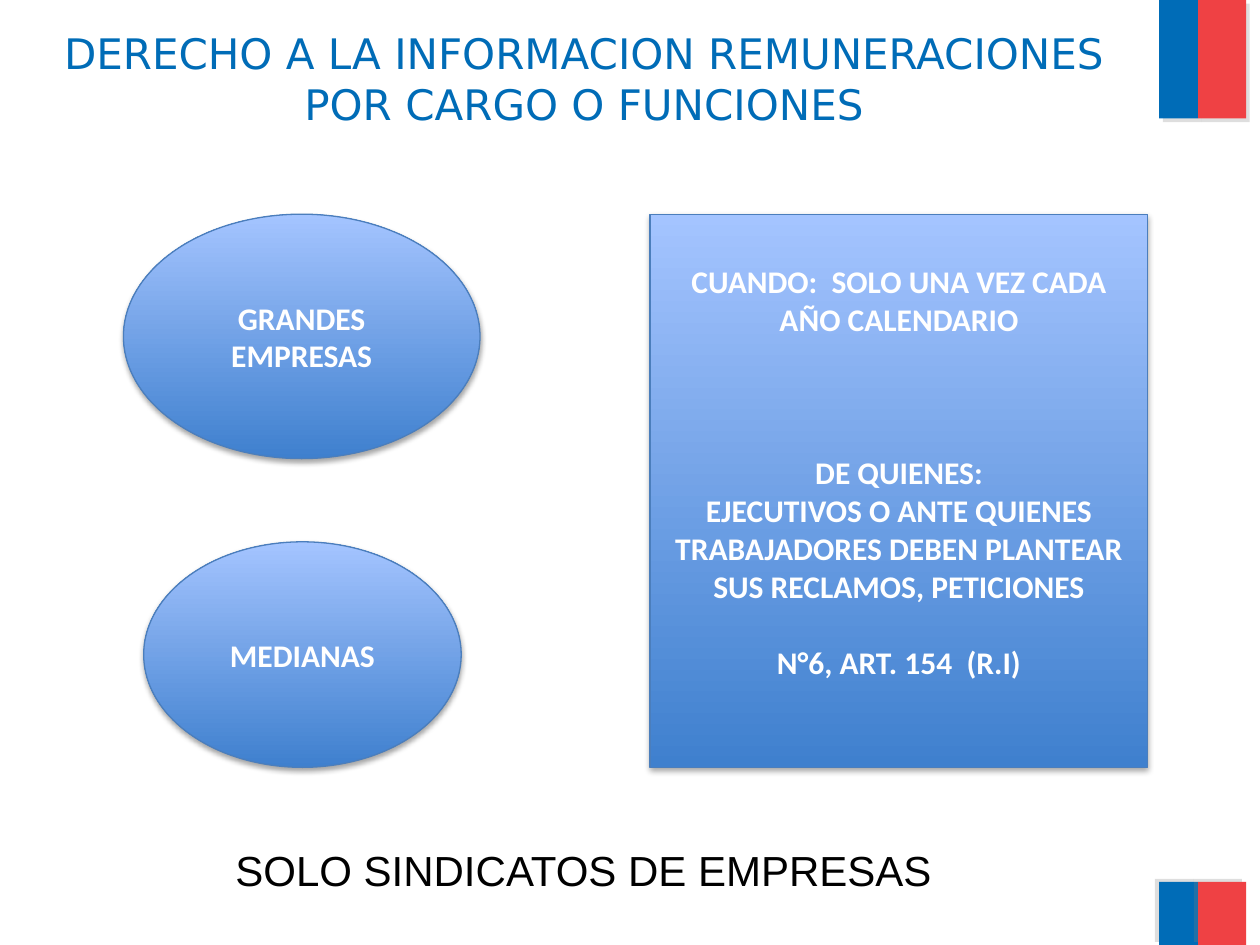
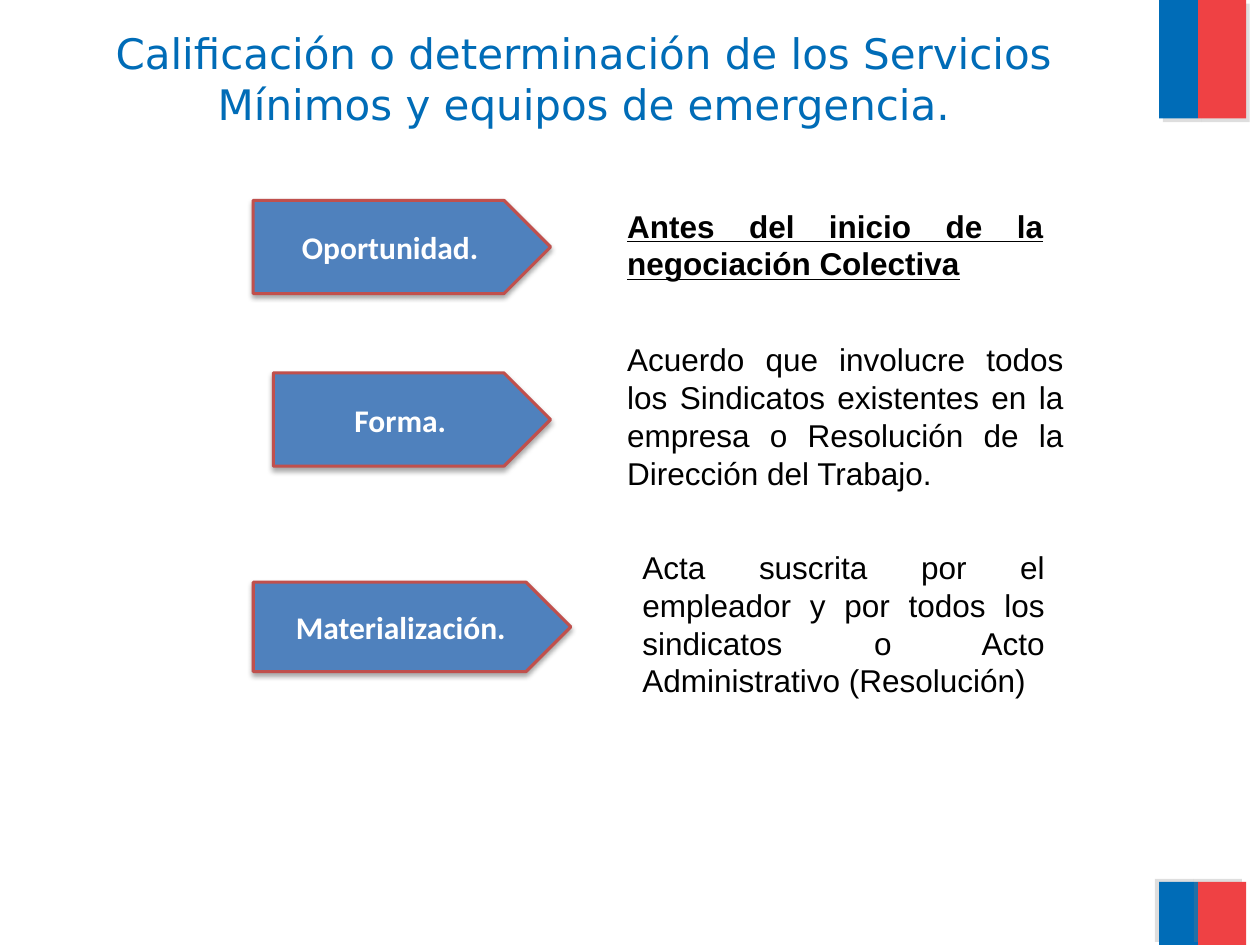
from lxml import etree
from pptx import Presentation
from pptx.dml.color import RGBColor
from pptx.enum.shapes import MSO_SHAPE as Shape
from pptx.enum.text import MSO_ANCHOR as Anchor, MSO_AUTO_SIZE as AutoSize, PP_ALIGN as Align
from pptx.oxml.ns import qn
from pptx.util import Inches, Pt

# Shared colours and fonts
BLUE = RGBColor(0x00, 0x6C, 0xB7)
RED = RGBColor(0xEF, 0x41, 0x44)
WHITE = RGBColor(0xFF, 0xFF, 0xFF)
BLACK = RGBColor(0x00, 0x00, 0x00)
GRADIENT_DARK = RGBColor(0x3F, 0x80, 0xCE)
GRADIENT_LIGHT = RGBColor(0xA4, 0xC4, 0xFF)
GRADIENT_EDGE = RGBColor(0x4B, 0x7E, 0xBC)
ARROW_FILL = RGBColor(0x4F, 0x81, 0xBD)
ARROW_EDGE = RGBColor(0xC0, 0x50, 0x4D)
SHADOW_GREY = RGBColor(0x80, 0x80, 0x80)

TITLE_FONT, BODY_FONT, SHAPE_FONT = "DejaVu Sans", "Arial", "Calibri"
LINE_PT = 22  # height of one 18 pt Calibri line


def inches(box):
    return [Inches(length) for length in box]


def write_text(frame, *lines, size=18, font=BODY_FONT, color=BLACK, bold=False,
               underline=False, align=Align.LEFT, anchor=Anchor.TOP, gaps=()):
    """Fill a frame with paragraphs; gaps maps a line number to points above it."""
    frame.word_wrap = True
    frame.auto_size = AutoSize.NONE
    frame.vertical_anchor = anchor
    gaps = dict(gaps)
    for number, line in enumerate(lines):
        paragraph = frame.paragraphs[0] if number == 0 else frame.add_paragraph()
        paragraph.alignment = align
        paragraph.space_before = Pt(gaps.get(number, 0))
        run = paragraph.add_run()
        run.text = line
        run.font.size, run.font.name = Pt(size), font
        run.font.bold, run.font.underline = bold, underline
        run.font.color.rgb = color


def cast_shadow(shape, color=BLACK, alpha=35, blur=3.1, distance=1.8, angle=90):
    shape.shadow.inherit = False
    effects = shape._element.spPr.find(qn("a:effectLst"))
    outer = etree.SubElement(effects, qn("a:outerShdw"), blurRad=str(Pt(blur)),
                             dist=str(Pt(distance)), dir=str(angle * 60000),
                             algn="ctr", rotWithShape="0")
    tint = etree.SubElement(outer, qn("a:srgbClr"), val=str(color))
    etree.SubElement(tint, qn("a:alpha"), val=str(alpha * 1000))


def add_label_shape(slide, kind, box, *lines, edge, edge_width, fill=None, gaps=()):
    """Outlined shape with a bold white label; without a fill it gets the gradient."""
    shape = slide.shapes.add_shape(kind, *inches(box))
    if fill is not None:
        shape.fill.solid()
        shape.fill.fore_color.rgb = fill
    else:
        shape.fill.gradient()
        shape.fill.gradient_angle = 90
        for stop, color in zip(shape.fill.gradient_stops, (GRADIENT_DARK, GRADIENT_LIGHT)):
            stop.color.rgb = color
    shape.line.color.rgb = edge
    shape.line.width = Pt(edge_width)
    cast_shadow(shape)
    write_text(shape.text_frame, *lines, font=SHAPE_FONT, color=WHITE, bold=True,
               align=Align.CENTER, anchor=Anchor.MIDDLE, gaps=gaps)
    return shape


def add_text(slide, box, text, **style):
    write_text(slide.shapes.add_textbox(*inches(box)).text_frame, text, **style)


def add_bands(slide, top, height, angle):
    """Blue and red band side by side at the right edge."""
    for color, left, width in ((BLUE, 9.2, 0.31), (RED, 9.51, 0.38)):
        band = slide.shapes.add_shape(Shape.RECTANGLE, *inches((left, top, width, height)))
        band.fill.solid()
        band.fill.fore_color.rgb = color
        band.line.fill.background()
        cast_shadow(band, SHADOW_GREY, alpha=25, blur=0, distance=3, angle=angle)


def new_slide(deck, title_text):
    slide = deck.slides.add_slide(deck.slide_layouts[5])
    add_bands(slide, 0, 0.94, 45)
    add_bands(slide, 7, 0.5, 215)
    title = slide.shapes.title
    title.left, title.top, title.width, title.height = inches((0.17, 0.17, 8.93, 1.25))
    write_text(title.text_frame, title_text, size=24, font=TITLE_FONT, color=BLUE,
               align=Align.CENTER)
    return slide


def add_pay_information(slide, box):
    """Company sizes on the left, conditions on the right, scope below."""
    left, top, width, height = box
    outline = dict(edge=GRADIENT_EDGE, edge_width=0.75)
    medium_height = 1.79
    add_label_shape(slide, Shape.OVAL, (left, top, 2.83, 1.94),
                    "GRANDES", "EMPRESAS", **outline)
    add_label_shape(slide, Shape.OVAL,
                    (left + 0.16, top + height - medium_height, 2.52, medium_height),
                    "MEDIANAS", **outline)

    conditions_width = 3.95
    conditions = add_label_shape(
        slide, Shape.RECTANGLE,
        (left + width - conditions_width, top, conditions_width, height),
        "CUANDO:  SOLO UNA VEZ CADA AÑO CALENDARIO",
        "DE QUIENES:",
        "EJECUTIVOS O ANTE QUIENES TRABAJADORES DEBEN PLANTEAR SUS RECLAMOS, PETICIONES",
        "N°6, ART. 154  (R.I)",
        gaps={1: 3 * LINE_PT, 3: LINE_PT}, **outline)
    conditions.text_frame.margin_bottom = Inches(0.05) + Pt(LINE_PT)

    add_text(slide, (left + 0.79, top + height + 0.56, 6.38, 0.5),
             "SOLO SINDICATOS DE EMPRESAS", size=24)


def add_step(slide, arrow_box, label, text_box, explanation, **style):
    """Arrow with a label; the explanation's box is measured from the arrow's corner."""
    left, top = arrow_box[:2]
    shift_x, shift_y, width, height = text_box
    add_label_shape(slide, Shape.PENTAGON, arrow_box, label,
                    fill=ARROW_FILL, edge=ARROW_EDGE, edge_width=1.75)
    add_text(slide, (left + shift_x, top + shift_y, width, height), explanation,
             align=Align.JUSTIFY, **style)


def add_minimum_services(slide, left, top):
    """Three steps from the given corner down."""
    add_step(slide, (left, top, 2.36, 0.74), "Oportunidad.", (2.87, 0, 3.5, 0.71),
             "Antes del inicio de la negociación Colectiva", bold=True, underline=True)
    add_step(slide, (left + 0.16, top + 1.37, 2.2, 0.74), "Forma.",
             (2.71, -0.31, 3.66, 1.31),
             "Acuerdo que involucre todos los Sindicatos existentes en la empresa "
             "o Resolución de la Dirección del Trabajo.")
    add_step(slide, (left, top + 3.03, 2.52, 0.71), "Materialización.",
             (2.99, -0.32, 3.39, 1.31),
             "Acta suscrita por el empleador y por todos los sindicatos "
             "o Acto Administrativo (Resolución)")


def main():
    deck = Presentation()
    deck.slide_width, deck.slide_height = Inches(10), Inches(7.5)

    pay = new_slide(deck, "DERECHO A LA INFORMACION REMUNERACIONES POR CARGO O FUNCIONES")
    add_pay_information(pay, (0.98, 1.7, 8.13, 4.39))

    services = new_slide(deck, "Calificación o determinación de los Servicios Mínimos "
                               "y equipos de emergencia.")
    add_minimum_services(services, 2.01, 1.59)

    deck.save("out.pptx")


if __name__ == "__main__":
    main()
